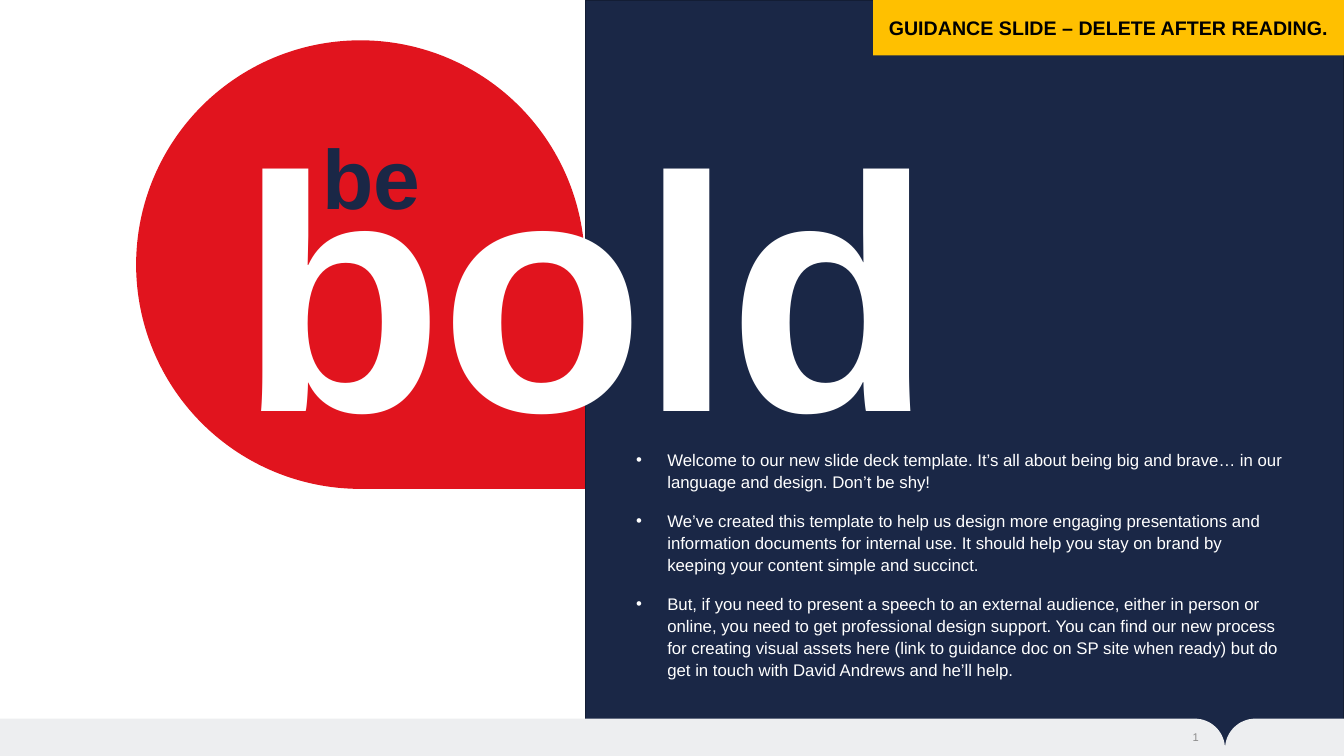
from math import cos, pi, sin

from lxml import etree
from pptx import Presentation
from pptx.dml.color import RGBColor
from pptx.enum.shapes import MSO_SHAPE as SHAPE
from pptx.enum.text import MSO_ANCHOR as ANCHOR, MSO_AUTO_SIZE as FIT, PP_ALIGN as ALIGN
from pptx.oxml.ns import qn
from pptx.util import Inches, Pt

# Content
TITLE = "bold"
LEAD_IN = "be"
BANNER = "GUIDANCE SLIDE – DELETE AFTER READING."
PAGE = "2"
BULLETS = [
    "Welcome to our new slide deck template. It’s all about being big and brave… in "
    "our language and design. Don’t be shy!",
    "We’ve created this template to help us design more engaging presentations and "
    "information documents for internal use. It should help you stay on brand by "
    "keeping your content simple and succinct.",
    "But, if you need to present a speech to an external audience, either in person or "
    "online, you need to get professional design support. You can find our new process "
    "for creating visual assets here (link to guidance doc on SP site when ready) but do "
    "get in touch with David Andrews and he’ll help.",
]
COLORS = {"navy": "1A2746", "edge": "131D34", "red": "E1141E", "amber": "FFC000",
          "footer": "EDEEF0", "grey": "8C8C8C", "white": "FFFFFF", "black": "000000"}

# Geometry in inches
WIDTH, HEIGHT = 13.33, 7.5
PANEL_LEFT = 5.81
FOOTER_TOP, FOOTER_SPLIT, CORNER = 7.13, 12.15, 0.3

prs = Presentation()
prs.slide_width, prs.slide_height = Inches(WIDTH), Inches(HEIGHT)
slide = prs.slides.add_slide(prs.slide_layouts[5])
shapes = slide.shapes


def color(name):
    return RGBColor.from_string(COLORS[name])


def paint(s, fill, line=None):
    s.shadow.inherit = False
    s.fill.solid()
    s.fill.fore_color.rgb = color(fill)
    if line:
        s.line.color.rgb = color(line)
        s.line.width = Pt(0.85)
    else:
        s.line.fill.background()
    return s


def add_block(kind, box, fill, line=None):
    return paint(shapes.add_shape(kind, *map(Inches, box)), fill, line)


def add_textbox(box):
    return shapes.add_textbox(*map(Inches, box))


def write(s, lines, size, font_color, bold=False, align=ALIGN.LEFT,
          anchor=ANCHOR.TOP, spacing=1.0, after=0, bullet=False):
    tf = s.text_frame
    for name, value in {"word_wrap": True, "auto_size": FIT.NONE,
                        "vertical_anchor": anchor}.items():
        setattr(tf, name, value)
    tf.text = "\n".join(lines)
    for p in tf.paragraphs:
        p.alignment, p.line_spacing, p.space_after = align, spacing, Pt(after)
        if bullet:
            pPr = p._p.get_or_add_pPr()
            pPr.set("marL", str(Inches(0.31)))
            pPr.set("indent", str(-Inches(0.31)))
            etree.SubElement(pPr, qn("a:buFont")).set("typeface", "Arial")
            etree.SubElement(pPr, qn("a:buChar")).set("char", "•")
        for r in p.runs:
            font = {"name": "Arial", "size": Pt(size), "bold": bold}
            for name, value in font.items():
                setattr(r.font, name, value)
            r.font.color.rgb = color(font_color)


def add_footer(outer, side):
    """Footer strip from the outer edge to the split, with a rounded inner corner."""
    cx, cy = FOOTER_SPLIT + side * CORNER, FOOTER_TOP + CORNER
    angles = [i * pi / 32 for i in range(17)]
    points = [(cx - side * CORNER * sin(a), cy - CORNER * cos(a)) for a in angles]
    points += [(FOOTER_SPLIT, HEIGHT), (outer, HEIGHT)]
    builder = shapes.build_freeform(Inches(outer), Inches(FOOTER_TOP))
    builder.add_line_segments([(Inches(x), Inches(y)) for x, y in points])
    paint(builder.convert_to_shape(), "footer")


# Navy panel and its bullets
add_block(SHAPE.RECTANGLE, (PANEL_LEFT, 0, WIDTH - PANEL_LEFT, HEIGHT), "navy", "edge")
write(add_textbox((6.21, 4.39, 6.62, 2.6)), BULLETS, 12, "white",
      spacing=1.1, after=12, bullet=True)

# Footer strips
add_footer(0, -1)
add_footer(WIDTH, 1)

# Red drop, its point at the lower right
add_block(SHAPE.TEAR, (1.35, 0.4, 4.45, 4.45), "red").rotation = 90

# Title, brought in front of the drop and the panel
title = shapes.title
title.left, title.top, title.width, title.height = map(Inches, (2.28, 1.16, 7.81, 3.9))
write(title, [TITLE], 239, "white", bold=True, spacing=0.9)
title.text_frame.paragraphs[0].runs[0].font._element.set("spc", "-300")
shapes._spTree.append(title._element)

# Page number as a live field
number = add_textbox((10.88, 7.18, 1.11, 0.27))
write(number, [PAGE], 8, "grey", align=ALIGN.RIGHT, anchor=ANCHOR.MIDDLE)
run = number.text_frame.paragraphs[0].runs[0]._r
run.tag = qn("a:fld")
run.set("id", "{B6F15528-21DE-4FAA-801E-634DDDAF4B2B}")
run.set("type", "slidenum")

# Lead-in word and guidance banner
write(add_textbox((3.1, 1.31, 2.89, 0.6)), [LEAD_IN], 60, "navy", bold=True, spacing=0.9)
banner = add_block(SHAPE.RECTANGLE, (8.66, 0, 4.67, 0.55), "amber")
write(banner, [BANNER], 14, "black", bold=True, align=ALIGN.CENTER, anchor=ANCHOR.MIDDLE)

prs.save("out.pptx")
